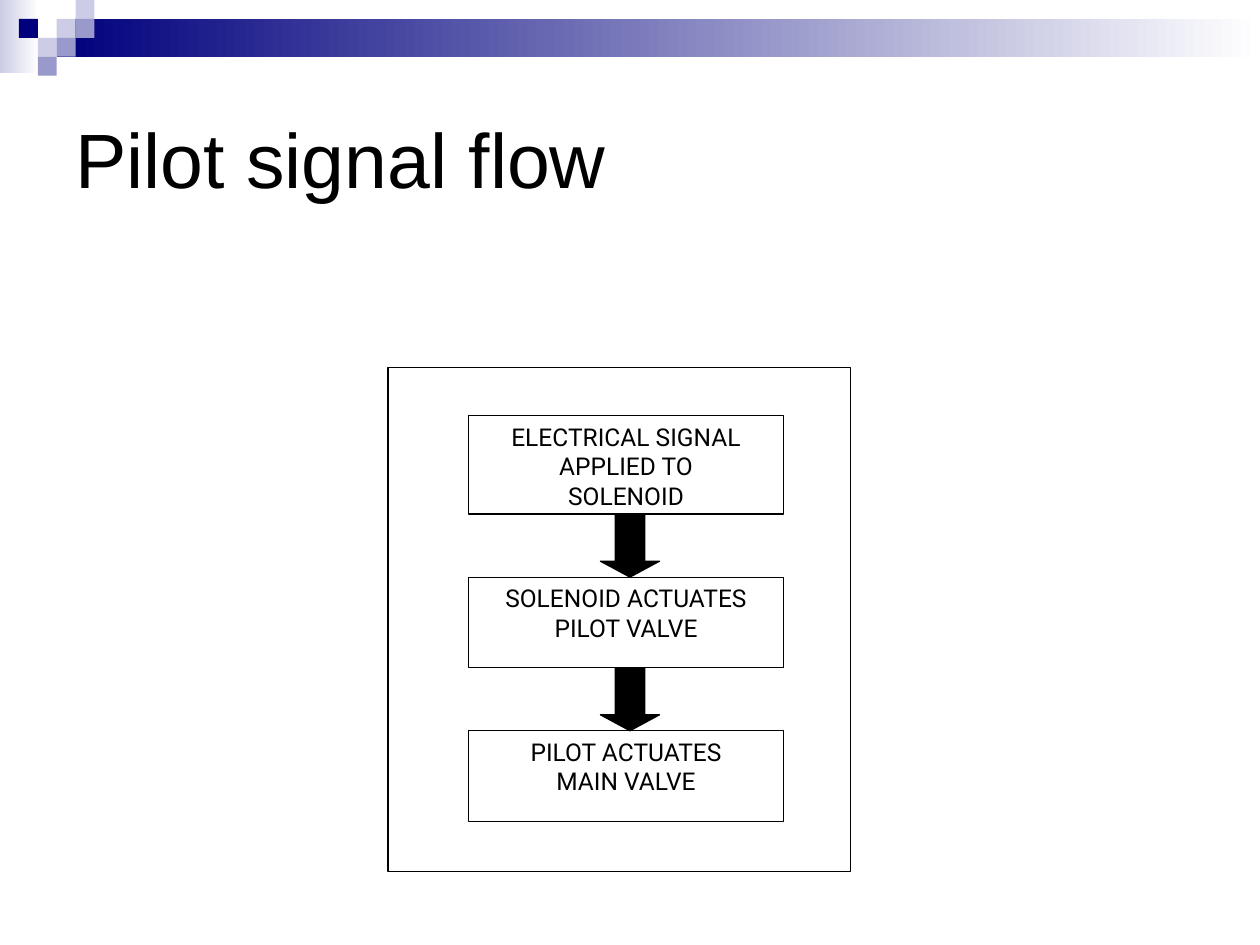
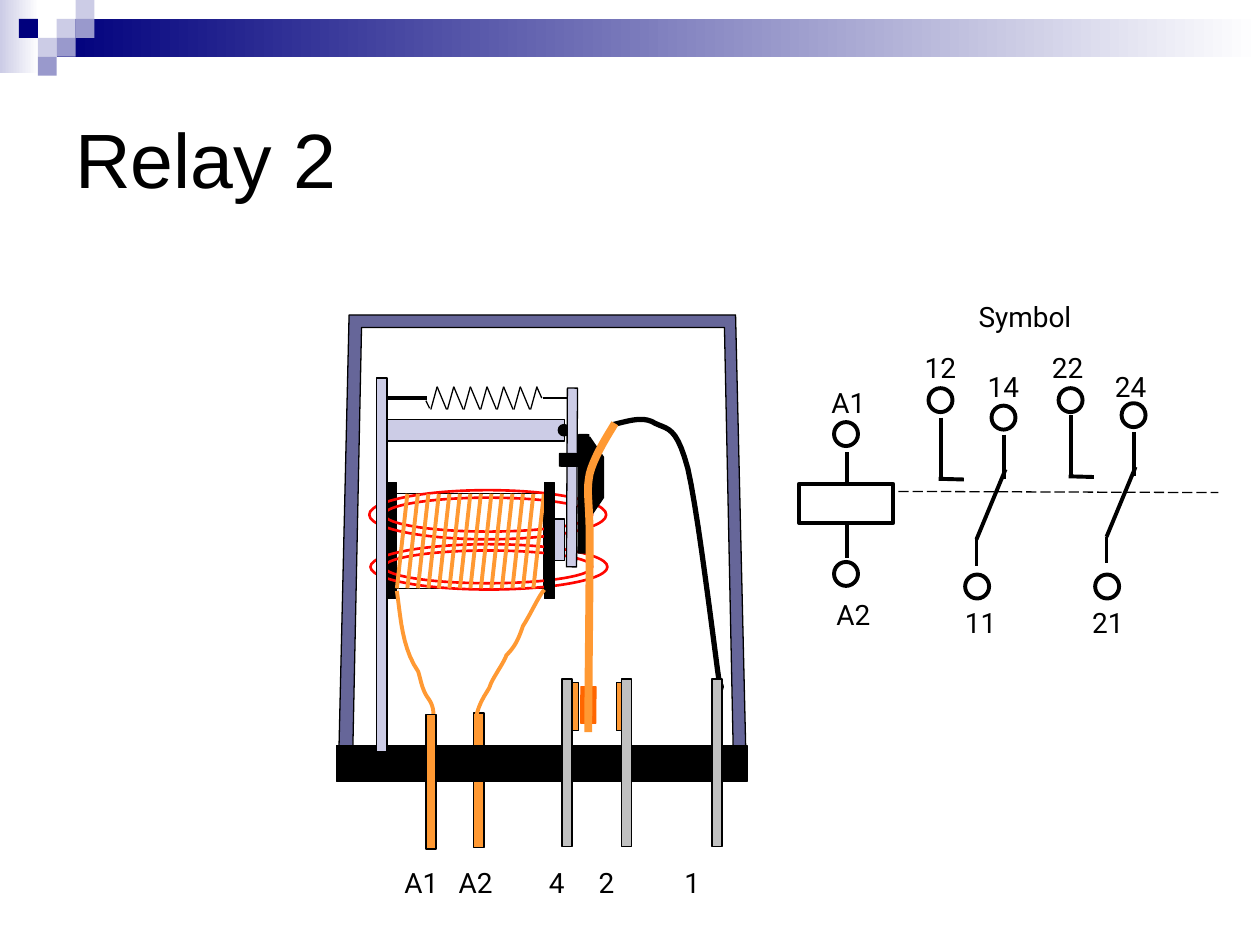
from lxml.etree import SubElement
from pptx import Presentation
from pptx.dml.color import RGBColor
from pptx.enum.dml import MSO_LINE
from pptx.enum.shapes import MSO_CONNECTOR, MSO_SHAPE
from pptx.enum.text import MSO_ANCHOR, PP_ALIGN
from pptx.oxml.ns import qn
from pptx.util import Pt

BLACK = RGBColor(0x00, 0x00, 0x00)
WHITE = RGBColor(0xFF, 0xFF, 0xFF)
NAVY = RGBColor(0x00, 0x00, 0x7D)
LILAC = RGBColor(0x99, 0x99, 0xCC)
PALE = RGBColor(0xCC, 0xCC, 0xE6)
SLATE = RGBColor(0x66, 0x66, 0x99)
GRAY = RGBColor(0xC0, 0xC0, 0xC0)
COPPER = RGBColor(0xFF, 0x99, 0x33)
RUST = RGBColor(0xFF, 0x66, 0x00)
RED = RGBColor(0xFF, 0x06, 0x00)
FLAME = RGBColor(0xFF, 0x33, 0x00)

RECT, OVAL = MSO_SHAPE.RECTANGLE, MSO_SHAPE.OVAL


def box(shapes, kind, x, y, w, h, fill=None, ink=BLACK, weight=0.75):
    """Add a preset shape; None leaves out the fill or the outline."""
    shape = shapes.add_shape(kind, Pt(x), Pt(y), Pt(w), Pt(h))
    shape.shadow.inherit = False
    for part, color in ((shape.fill, fill), (shape.line.fill, ink)):
        if color is None:
            part.background()
        else:
            part.solid()
            part.fore_color.rgb = color
    if ink is not None:
        shape.line.width = Pt(weight)
    return shape


def line(shapes, x1, y1, x2, y2, ink=BLACK, weight=2.25):
    wire = shapes.add_connector(MSO_CONNECTOR.STRAIGHT, Pt(x1), Pt(y1), Pt(x2), Pt(y2))
    wire.line.color.rgb = ink
    wire.line.width = Pt(weight)
    SubElement(wire._element.spPr, qn("a:effectLst"))
    return wire


deck = Presentation()
deck.slide_width, deck.slide_height = Pt(720), Pt(540)

# Shared band and title
CELL = 10.8
BANDS = [(0, 0, 22.3, 41.8, PALE), (32.4, 10.8, 687.6, 21.6, NAVY)]
CELLS = [
    (3, 1, PALE), (4, 0, PALE), (4, 1, LILAC), (2, 2, PALE),
    (1, 1, NAVY), (3, 2, LILAC), (2, 3, LILAC),
]
pages = []
for title in ("Pilot signal flow", "Relay 2"):
    shapes = deck.slides.add_slide(deck.slide_layouts[6]).shapes
    pages.append(shapes)
    for x, y, w, h, color in BANDS:
        band = box(shapes, RECT, x, y, w, h, ink=None)
        band.fill.gradient()
        band.fill.gradient_angle = 0
        for stop, tint, place in zip(band.fill.gradient_stops, (color, WHITE), (0, 1)):
            stop.color.rgb = tint
            stop.position = place
    for col, row, color in CELLS:
        box(shapes, RECT, col * CELL, row * CELL, CELL, CELL, color, None)
    frame = shapes.add_textbox(Pt(36), Pt(36), Pt(648), Pt(108)).text_frame
    frame.word_wrap = True
    frame.vertical_anchor = MSO_ANCHOR.MIDDLE
    frame.text = title
    font = frame.paragraphs[0].runs[0].font
    font.name, font.size, font.color.rgb = "Arial", Pt(44), BLACK
flow, relay = pages

# Slide 1: flow chart
box(flow, RECT, 221.8, 210.2, 264.2, 288, WHITE)
STEPS = [
    (237.6, 56.2, "ELECTRICAL SIGNAL\nAPPLIED TO\nSOLENOID"),
    (329.8, 51.8, "SOLENOID ACTUATES\nPILOT VALVE"),
    (417.6, 51.8, "PILOT ACTUATES\nMAIN VALVE"),
]
for y, h, text in STEPS:
    frame = box(flow, RECT, 267.8, y, 180, h, WHITE).text_frame
    frame.word_wrap = True
    frame.vertical_anchor = MSO_ANCHOR.TOP
    frame.text = text
    for para in frame.paragraphs:
        para.alignment = PP_ALIGN.CENTER
        font = para.runs[0].font
        font.name, font.size, font.color.rgb = "Roboto", Pt(14), BLACK
for (y, h, _), (below, _, _) in zip(STEPS, STEPS[1:]):
    arrow = box(flow, MSO_SHAPE.DOWN_ARROW, 343.1, y + h, 33.8, below - y - h, BLACK)
    arrow.adjustments[1] = 0.27

# Slide 2: relay case
for x, y, w, h, slant, color in [
    (193.7, 180, 232.5, 249.1, 0.025, SLATE),
    (201.6, 187.2, 217.4, 241.9, 0.023, WHITE),
]:
    case = box(relay, MSO_SHAPE.TRAPEZOID, x, y, w, h, color)
    case.adjustments[0] = slant

# Return spring
line(relay, 221, 227.5, 244.1, 227.5)
for turn in range(7):
    x = 246.2 + 9.5 * turn
    line(relay, x, 234, x + 3.6, 221, weight=0.75)
    if turn < 6:
        line(relay, x + 3.6, 221, x + 9, 234, weight=0.75)
line(relay, 306.7, 221, 309.6, 227.5, weight=0.75)
line(relay, 329.8, 227.5, 310.3, 227.5, weight=0.75)
line(relay, 245.5, 233.3, 243.4, 229, weight=0.75)

# Coil and magnetic field
box(relay, RECT, 218.9, 239.8, 103.7, 12.2, PALE)
box(relay, OVAL, 319, 242.6, 6.5, 6.5, BLACK)
box(relay, RECT, 226.8, 282.2, 84.2, 54)
box(relay, RECT, 221, 275.8, 5.8, 66.2, BLACK)
for x, y, w, h in [
    (219.6, 314.6, 118.8, 18.7), (211.7, 311, 135.4, 25.9),
    (219.6, 284.4, 118.8, 19.4), (211, 280.1, 135.4, 28.1),
]:
    box(relay, OVAL, x, y, w, h, ink=RED, weight=1.5)
for turn in range(14):
    x = 226.8 + 6 * turn
    line(relay, x, 336.2, x + 6, 282.2, COPPER)

# Core end, base and armature
for x, y, w, h, color in [
    (311, 275.8, 5.8, 66.2, BLACK),
    (316.8, 296.6, 5.8, 23.8, PALE),
    (270.7, 407.5, 5.8, 77, COPPER),
    (192.2, 426.2, 234.7, 20.2, BLACK),
    (215.3, 216, 5.8, 213.8, PALE),
]:
    box(relay, RECT, x, y, w, h, color)
for x, y, w, h, color, edge in [
    (324, 221.8, 5.8, 102.2, PALE, BLACK),
    (319.7, 259.2, 15.1, 7.2, BLACK, BLACK),
    (330.5, 248.4, 5.8, 67.7, BLACK, BLACK),
    (331.9, 392.4, 8.6, 20.9, RUST, RUST),
]:
    box(relay, RECT, x, y, w, h, color, edge).rotation = 0.3
pad = box(relay, MSO_SHAPE.TRAPEZOID, 317.9, 268.9, 46.1, 7.9, BLACK)
pad.adjustments[0] = 1.46
pad.rotation = 90

# Curved wires: a start, then three points for each cubic segment
WIRES = [
    (BLACK, 3, [
        (350.6, 242.6), (359.3, 240.5), (367.9, 237.6), (374.4, 241.9),
        (381.6, 245.5), (386.6, 243.4), (393.1, 267.8),
        (398.9, 292.3), (408.2, 370.1), (411.1, 390.2)]),
    (COPPER, 2.25, [
        (226.8, 337.7), (229, 353.5), (229.7, 370.1), (239, 383.8),
        (240.5, 388.8), (241.2, 393.8), (244.1, 398.2),
        (246.2, 401), (247.7, 403.9), (247.7, 408.2)]),
    (COPPER, 2.25, [
        (311, 337), (307.4, 341.3), (303.8, 349.9), (298.8, 357.8),
        (296.6, 364.3), (294.5, 369.4), (289.4, 374.4),
        (288, 378.7), (281.5, 387.4), (280.1, 391.7),
        (279.4, 394.6), (274.3, 399.6), (272.2, 409)]),
    (COPPER, 4.5, [
        (336.2, 418.3), (336.2, 399.6), (337, 333.4), (337, 308.9),
        (337, 284.4), (334.8, 282.2), (337, 270.7),
        (339.8, 259.9), (348.5, 247), (351.4, 241.9)]),
]
for color, weight, knots in WIRES:
    track = []
    for k in range(0, len(knots) - 1, 3):
        for step in range(1, 11):
            t = step / 10
            mix = ((1 - t) ** 3, 3 * t * (1 - t) ** 2, 3 * t * t * (1 - t), t ** 3)
            spot = [sum(m * p[axis] for m, p in zip(mix, knots[k:k + 4])) for axis in (0, 1)]
            track.append((Pt(spot[0]), Pt(spot[1])))
    path = relay.build_freeform(Pt(knots[0][0]), Pt(knots[0][1]))
    path.add_line_segments(track, close=False)
    wire = path.convert_to_shape()
    wire.shadow.inherit = False
    wire.fill.background()
    wire.line.color.rgb = color
    wire.line.width = Pt(weight)

# Contacts and pins
box(relay, OVAL, 407.5, 389.5, 5.8, 5.8, BLACK)
box(relay, RECT, 243.4, 408.2, 5.8, 77, COPPER)
for x in (324.7, 352.1):
    box(relay, RECT, x, 390.2, 5.8, 27.4, COPPER)
for x in (321.1, 355, 406.8):
    box(relay, RECT, x, 388.1, 5.8, 95.8, GRAY)

# Circuit symbol
RING = 13.7
for y in (241.2, 321.1):
    box(relay, OVAL, 476.6, y, RING, RING, weight=2.25)
for color in (FLAME, BLACK):
    line(relay, 483.8, 258.5, 483.8, 318.6, color)
box(relay, RECT, 456.5, 276.5, 54, 22.3, WHITE, weight=2.25)
link = line(relay, 513.4, 280.8, 696.2, 281.5, weight=0.75)
link.line.dash_style = MSO_LINE.LONG_DASH
for dx, lift in ((0, 0), (74.3, 1.4)):
    for x, y in ((530.6, 221.8), (551.5, 328.3), (566.6, 231.8 - lift)):
        box(relay, OVAL, x + dx, y, RING, RING, weight=2.25)
    for x1, y1, x2, y2 in [
        (537.8, 238.7, 537.8, 273.6),
        (536.4, 273.6, 550.8, 274),
        (558, 308.2, 574.6, 268.2),
        (558, 308.2, 558, 323.3),
        (573.8, 248.4, 573.8, 273.6),
    ]:
        line(relay, x1 + dx, y1 - lift, x2 + dx, y2 - lift)

# Labels
LABELS = [
    ("Symbol", 552.2, 167.8), ("12", 521.3, 196.6), ("14", 557.3, 207.4),
    ("22", 594, 196.6), ("24", 630, 207.4), ("A1", 468, 216.7),
    ("A2", 470.9, 337.7), ("11", 544.3, 342.7), ("21", 617, 342.7),
    ("A1", 224, 491), ("A2", 255, 491), ("4", 306.5, 491),
    ("2", 335, 491), ("1", 384, 491),
]
for text, x, y in LABELS:
    wide = 115.2 if text == "Symbol" else 37
    frame = relay.add_textbox(Pt(x), Pt(y), Pt(wide), Pt(26.6)).text_frame
    frame.word_wrap = True
    frame.text = text
    font = frame.paragraphs[0].runs[0].font
    font.name, font.size, font.color.rgb = "Roboto", Pt(16), BLACK

deck.save("out.pptx")
